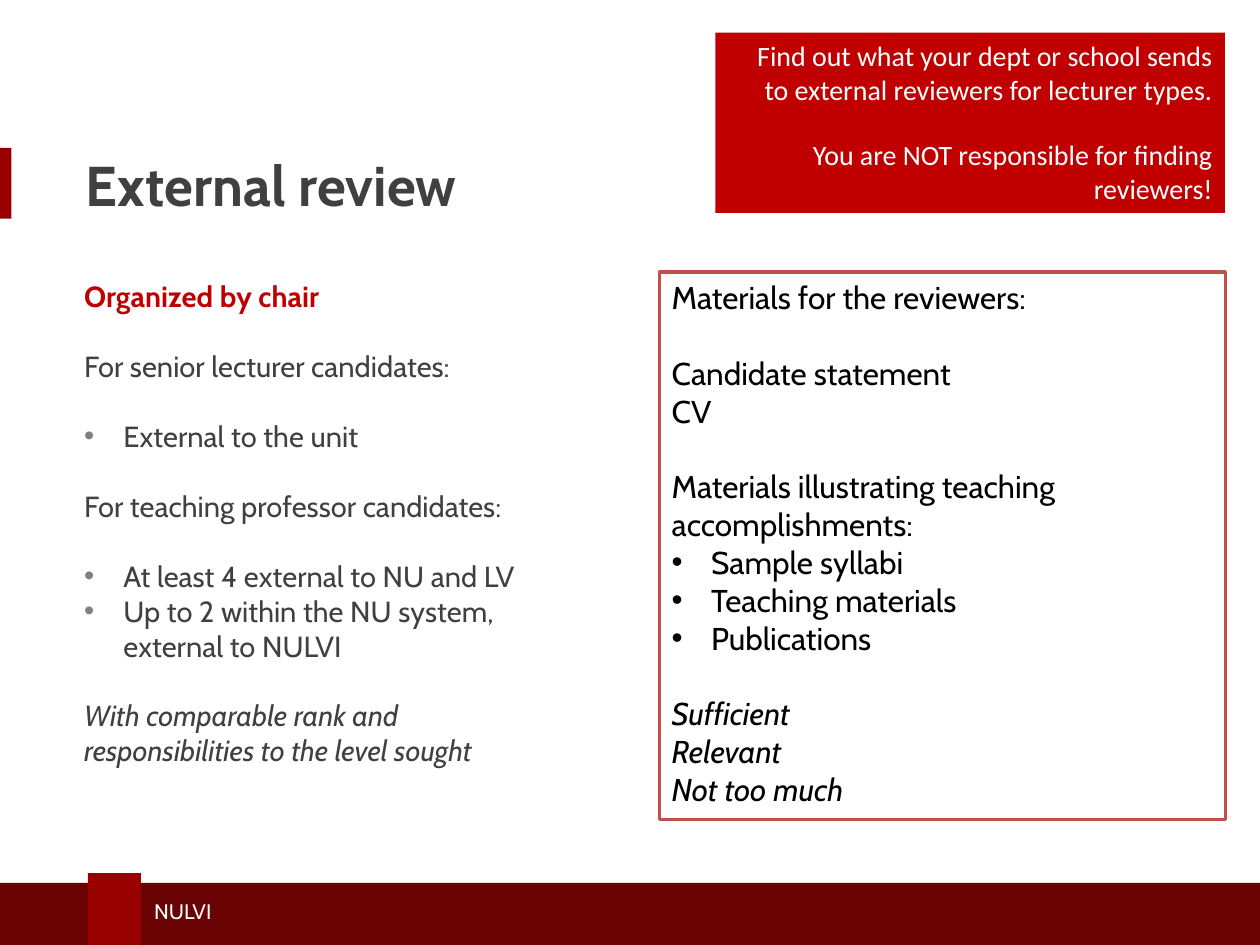
import pptx
import pptx.util
import pptx.dml.color
import pptx.enum.shapes
import pptx.enum.text
import lxml.etree

Pt = pptx.util.Pt
ALIGN = pptx.enum.text.PP_ALIGN
ANCHOR = pptx.enum.text.MSO_ANCHOR
NS = "{http://schemas.openxmlformats.org/drawingml/2006/main}"


def rgb(value):
    return pptx.dml.color.RGBColor.from_string(value)


def write(tf, items, base, align=ALIGN.LEFT, bullet_color=None):
    for i, (text, gap, bullet, extra) in enumerate(items):
        p = tf.paragraphs[0] if i == 0 else tf.add_paragraph()
        p.alignment = align
        p.space_before = Pt(gap)
        if bullet:
            pPr = p._p.get_or_add_pPr()
            pPr.set("marL", str(Pt(22.5)))
            pPr.set("indent", str(-Pt(22.5)))
            if bullet_color:
                clr = lxml.etree.SubElement(pPr, NS + "buClr")
                lxml.etree.SubElement(clr, NS + "srgbClr", val=bullet_color)
            lxml.etree.SubElement(pPr, NS + "buFont", typeface="Arial")
            lxml.etree.SubElement(pPr, NS + "buChar", char="•")
        r = p.add_run()
        r.text = text
        for name, value in {**base, **extra}.items():
            if name == "color":
                r.font.color.rgb = rgb(value)
            else:
                setattr(r.font, name, value)


prs = pptx.Presentation()
prs.slide_width, prs.slide_height = Pt(720), Pt(540)
s = prs.slides.add_slide(prs.slide_layouts[6])

boxes = {
    "accent": (0, 84.5, 6.5, 40.5, "990000", None, ANCHOR.TOP),
    "footer": (0, 504.5, 720, 35.5, "690304", None, ANCHOR.TOP),
    "tab": (50.25, 499, 30.25, 41, "990000", None, ANCHOR.TOP),
    "unit": (81, 510, 284.5, 21.5, None, None, ANCHOR.MIDDLE),
    "title": (42, 80, 360, 50, None, None, ANCHOR.MIDDLE),
    "callout": (408.75, 18.75, 291.25, 103, "C00000", None, ANCHOR.TOP),
    "process": (41, 155.5, 287.5, 324.5, None, None, ANCHOR.TOP),
    "materials": (376.75, 155.5, 323.5, 312.75, "FFFFFF", "C0504D", ANCHOR.TOP),
}
frames = {}
for name, (x, y, w, h, fill, line, anchor) in boxes.items():
    place = Pt(x), Pt(y), Pt(w), Pt(h)
    if fill:
        sp = s.shapes.add_shape(pptx.enum.shapes.MSO_SHAPE.RECTANGLE, *place)
        sp.shadow.inherit = False
        sp.fill.solid()
        sp.fill.fore_color.rgb = rgb(fill)
        if line:
            sp.line.color.rgb = rgb(line)
            sp.line.width = Pt(2)
        else:
            sp.line.fill.background()
    else:
        sp = s.shapes.add_textbox(*place)
    tf = sp.text_frame
    tf.word_wrap = True
    tf.vertical_anchor = anchor
    frames[name] = tf

cabin = {"name": "Cabin", "color": "404041"}
italic = {"italic": True}

write(frames["unit"], [("NULVI", 0, False, {})],
      {**cabin, "size": Pt(12), "color": "FFFFFF"})
write(frames["title"], [("External review", 0, False, {})],
      {**cabin, "size": Pt(32), "bold": True})
write(frames["callout"], [
    ("Find out what your dept or school sends to external reviewers for lecturer types.", 0, False, {}),
    ("You are NOT responsible for finding reviewers!", 18, False, {}),
], {"name": "Calibri", "size": Pt(16), "color": "FFFFFF"}, ALIGN.RIGHT)

gap = 20
write(frames["process"], [
    ("Organized by chair", 0, False, {"bold": True, "color": "C00000"}),
    ("For senior lecturer candidates:", gap, False, {}),
    ("External to the unit", gap, True, {}),
    ("For teaching professor candidates:", gap, False, {}),
    ("At least 4 external to NU and LV", gap, True, {}),
    ("Up to 2 within the NU system, external to NULVI", 0, True, {}),
    ("With comparable rank and responsibilities to the level sought", gap, False, italic),
], {**cabin, "size": Pt(16.65)}, bullet_color="808080")

gap = 21.6
write(frames["materials"], [
    ("Materials for the reviewers:", 0, False, {}),
    ("Candidate statement", gap, False, {}),
    ("CV", 0, False, {}),
    ("Materials illustrating teaching accomplishments:", gap, False, {}),
    ("Sample syllabi", 0, True, {}),
    ("Teaching materials", 0, True, {}),
    ("Publications", 0, True, {}),
    ("Sufficient", gap, False, italic),
    ("Relevant", 0, False, italic),
    ("Not too much", 0, False, italic),
], {**cabin, "size": Pt(18), "color": "000000"})

prs.save("out.pptx")
